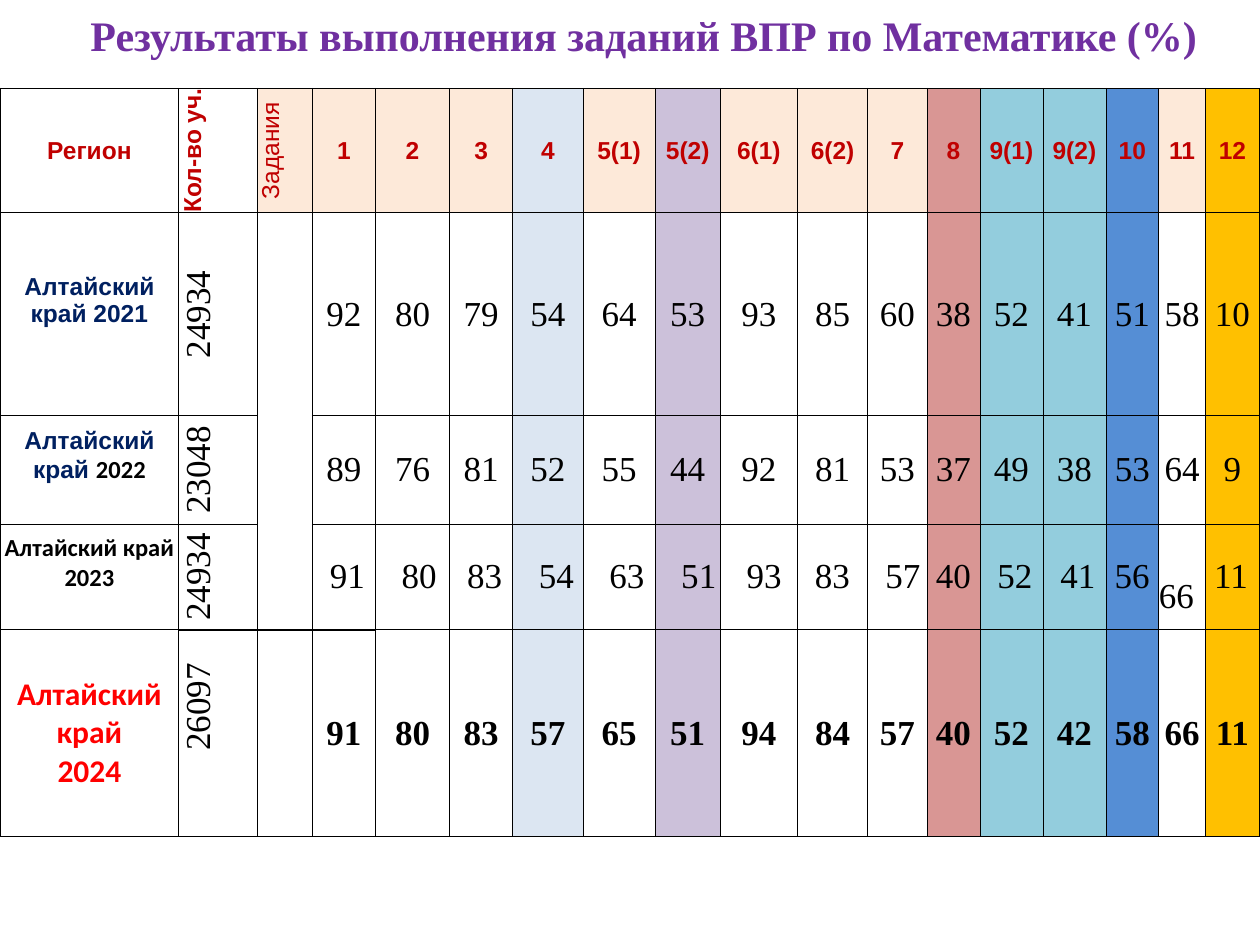
"""Build a slide with a table of regional mathematics test results."""
from dataclasses import dataclass, replace

from lxml import etree
from pptx import Presentation
from pptx import util as u
from pptx.dml.color import RGBColor
from pptx.enum import text
from pptx.oxml import ns

COLORS = {
    "title": "7030A0", "header": "C00000", "navy": "002060", "red": "FF0000",
    "black": "000000", "peach": "FDE9D9", "ice": "DCE6F2", "lilac": "CCC1DA",
    "rose": "D99694", "aqua": "93CDDD", "blue": "558ED5", "gold": "FFC000",
}
SERIF, SANS, BODY = "Times New Roman", "Arial", "Calibri"
COLUMN_WIDTHS = [102.24, 44.64, 31.68, 36, 42.48, 36, 40.32, 41.04, 37.44,
                 43.92, 40.32, 33.84, 30.24, 36, 36, 30.24, 26.64, 30.96]
ROW_HEIGHTS = [61.2, 115.92, 61.92, 60.48, 118.08]
TASKS = ["1", "2", "3", "4", "5(1)", "5(2)", "6(1)", "6(2)", "7", "8",
         "9(1)", "9(2)", "10", "11", "12"]
TASK_FILLS = {"4": "ice", "5(2)": "lilac", "8": "rose", "9(1)": "aqua",
              "9(2)": "aqua", "10": "blue", "12": "gold"}
FIRST_TASK = 3
SPACE_WIDTH = 5


@dataclass(frozen=True)
class Style:
    font: str
    size: float
    color: str
    bold: bool = False


@dataclass(frozen=True)
class Entry:
    lines: tuple[str, ...]
    style: Style
    tail: str = ""
    tail_style: Style | None = None
    vertical: bool = False
    align: text.PP_ALIGN = text.PP_ALIGN.CENTER
    indent: float = 0
    top: float = 0
    bottom: float = 0


@dataclass(frozen=True)
class Result:
    region: Entry
    pupils: Entry
    scores: tuple[int, ...]
    style: Style
    indents: tuple[int, ...] = ()


HEADER = Style(SANS, 14, "header", True)
REGION = Style(SANS, 14, "navy", True)
YEAR = Style(BODY, 14, "black", True)
LATEST = Style(BODY, 18, "red", True)
SCORE = Style(SERIF, 20, "black")

RESULTS = [
    Result(Entry(("Алтайский край 2021",), REGION, bottom=16),
           Entry(("24934",), SCORE, vertical=True),
           (92, 80, 79, 54, 64, 53, 93, 85, 60, 38, 52, 41, 51, 58, 10), SCORE),
    Result(Entry(("Алтайский край ",), REGION, "2022", YEAR, bottom=16),
           Entry(("23048",), SCORE, vertical=True),
           (89, 76, 81, 52, 55, 44, 92, 81, 53, 37, 49, 38, 53, 64, 9), SCORE),
    Result(Entry(("Алтайский край 2023",), YEAR, bottom=16),
           Entry(("24934",), SCORE, vertical=True),
           (91, 80, 83, 54, 63, 51, 93, 83, 57, 40, 52, 41, 56, 66, 11), SCORE,
           (2, 3, 2, 3, 3, 3, 3, 2, 2, 1, 2, 2, 1, 0, 1)),
    Result(Entry(("Алтайский край", "2024"), LATEST),
           Entry(("26097",), SCORE, vertical=True, indent=6 * SPACE_WIDTH),
           (91, 80, 83, 57, 65, 51, 94, 84, 57, 40, 52, 42, 58, 66, 11),
           replace(SCORE, bold=True)),
]


def set_font(font, style: Style) -> None:
    font.name, font.size, font.bold = style.font, u.Pt(style.size), style.bold
    font.color.rgb = RGBColor.from_string(COLORS[style.color])


def write(cell, entry: Entry) -> None:
    cell.vertical_anchor = text.MSO_ANCHOR.MIDDLE
    cell.margin_top, cell.margin_bottom = u.Pt(entry.top), u.Pt(entry.bottom)
    if entry.vertical:
        cell._tc.get_or_add_tcPr().set("vert", "vert270")
    frame = cell.text_frame
    for number, line in enumerate(entry.lines):
        paragraph = frame.paragraphs[0] if number == 0 else frame.add_paragraph()
        paragraph.alignment = entry.align
        if entry.indent:
            paragraph._p.get_or_add_pPr().set("marL", str(u.Pt(entry.indent)))
        paragraph.add_run().text = line
        if entry.tail_style:
            set_font(paragraph.runs[0].font, entry.style)
            tail = paragraph.add_run()
            tail.text = entry.tail
            set_font(tail.font, entry.tail_style)
        else:
            set_font(paragraph.font, entry.style)
            set_font(paragraph.runs[0].font, entry.style)


def outline(cell, row: int, column: int) -> None:
    properties = cell._tc.get_or_add_tcPr()
    heavy = {3: "B", 4: "T"}.get(row) if column in (1, 2, 3) else None
    for side in "LRTB":
        line = etree.SubElement(properties, ns.qn(f"a:ln{side}"),
                                w=str(u.Pt(1 if side == heavy else 0.5)))
        fill = etree.SubElement(line, ns.qn("a:solidFill"))
        etree.SubElement(fill, ns.qn("a:srgbClr"), val=COLORS["black"])


def fill_for(row: int, column: int) -> str | None:
    default = "peach" if row == 0 and column >= 2 else None
    if column < FIRST_TASK:
        return default
    return TASK_FILLS.get(TASKS[column - FIRST_TASK], default)


def prepare_cells(table) -> None:
    for row in range(len(ROW_HEIGHTS)):
        for column in range(len(COLUMN_WIDTHS)):
            cell = table.cell(row, column)
            cell.margin_left = cell.margin_right = 0
            cell.margin_top = cell.margin_bottom = 0
            outline(cell, row, column)
            color = fill_for(row, column)
            if color:
                cell.fill.solid()
                cell.fill.fore_color.rgb = RGBColor.from_string(COLORS[color])
            else:
                cell.fill.background()


def score_entry(result: Result, task: int) -> Entry:
    entry = Entry((str(result.scores[task]),), result.style)
    if not result.indents:
        return entry
    lowered = 23 if TASKS[task] == "11" else 0
    return replace(entry, align=text.PP_ALIGN.LEFT, top=lowered,
                   indent=result.indents[task] * SPACE_WIDTH)


def add_results(slide) -> None:
    table = slide.shapes.add_table(
        len(ROW_HEIGHTS), len(COLUMN_WIDTHS), u.Pt(0), u.Pt(50.4),
        u.Pt(sum(COLUMN_WIDTHS)), u.Pt(sum(ROW_HEIGHTS))).table
    table.first_row = table.horz_banding = False
    for column, width in zip(table.columns, COLUMN_WIDTHS):
        column.width = u.Pt(width)
    for row, height in zip(table.rows, ROW_HEIGHTS):
        row.height = u.Pt(height)
    prepare_cells(table)
    table.cell(1, 2).merge(table.cell(3, 2))

    headings = [Entry(("Регион",), HEADER),
                Entry(("Кол-во уч.",), HEADER, vertical=True),
                Entry(("Задания",), replace(HEADER, bold=False), vertical=True)]
    headings += [Entry((task,), HEADER) for task in TASKS]
    for column, heading in enumerate(headings):
        write(table.cell(0, column), heading)
    for row, result in enumerate(RESULTS, 1):
        write(table.cell(row, 0), result.region)
        write(table.cell(row, 1), result.pupils)
        for task in range(len(TASKS)):
            write(table.cell(row, FIRST_TASK + task), score_entry(result, task))


def add_title(slide) -> None:
    title = slide.shapes.title
    title.left, title.top = u.Pt(36), u.Pt(0)
    title.width, title.height = u.Pt(663.84), u.Pt(39.6)
    title.text_frame.text = "Результаты выполнения заданий ВПР по Математике (%)"
    title.text_frame.vertical_anchor = text.MSO_ANCHOR.MIDDLE
    paragraph = title.text_frame.paragraphs[0]
    paragraph.alignment = text.PP_ALIGN.CENTER
    set_font(paragraph.font, Style(SERIF, 24, "title", True))


def main() -> None:
    presentation = Presentation()
    presentation.slide_width, presentation.slide_height = u.Pt(720), u.Pt(540)
    slide = presentation.slides.add_slide(presentation.slide_layouts[5])
    add_title(slide)
    add_results(slide)
    presentation.save("out.pptx")


if __name__ == "__main__":
    main()
